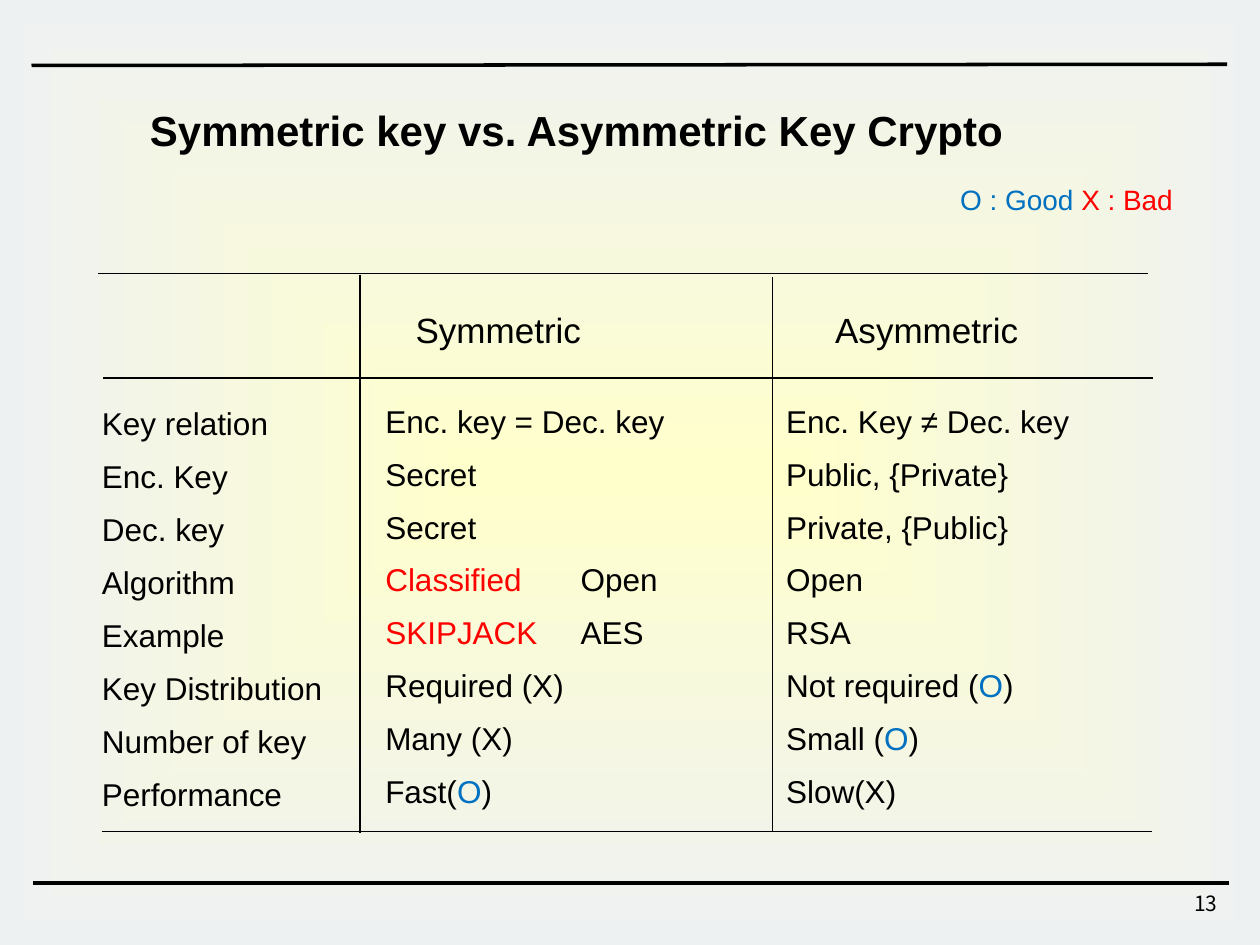
from lxml.etree import SubElement
from pptx import Presentation
from pptx.dml.color import RGBColor
from pptx.enum.shapes import MSO_CONNECTOR as Connector, MSO_SHAPE as Shape
from pptx.enum.text import MSO_ANCHOR as Anchor, MSO_AUTO_SIZE as AutoSize, PP_ALIGN as Align
from pptx.oxml import parse_xml
from pptx.oxml.ns import nsdecls, qn
from pptx.util import Inches, Pt

BLACK, RED, BLUE = "000000", "FF0000", "0070C0"
CENTER_COLOR, EDGE_COLOR = "FFFFCC", "EEF1F2"
TAB = 1.55

# Content: a line is a string or a list of (text, colour) runs
TITLE = "Symmetric key vs. Asymmetric Key Crypto"
LEGEND = [("O : Good ", BLUE), ("X : Bad", RED)]
PAGE_NUMBER = "13"
GOOD = [("O", BLUE), (")", BLACK)]

HEADINGS = [("Symmetric", (3.2, 2.4, 1.51, 0.43)),
            ("Asymmetric", (6.53, 2.4, 1.65, 0.43))]

COLUMNS = [
    ((0.71, 3.04, 2.04, 3.49),
     ["Key relation", "Enc. Key", "Dec. key", "Algorithm", "Example",
      "Key Distribution", "Number of key", "Performance"]),
    ((2.96, 3.02, 2.5, 3.49),
     ["Enc. key = Dec. key", "Secret", "Secret",
      [("Classified", RED), ("\tOpen", BLACK)],
      [("SKIPJACK", RED), ("\tAES", BLACK)],
      "Required (X)", "Many (X)", [("Fast(", BLACK)] + GOOD]),
    ((6.14, 3.02, 2.45, 3.49),
     ["Enc. Key ≠ Dec. key", "Public, {Private}", "Private, {Public}",
      "Open", "RSA", [("Not required (", BLACK)] + GOOD,
      [("Small (", BLACK)] + GOOD, "Slow(X)"]),
]

# Lines: start x, start y, end x, end y
FRAME_RULES = [(0.25, 0.52, 9.74, 0.51), (0.26, 7.01, 9.75, 7.01)]
GRID_RULES = [(0.78, 2.17, 9.11, 2.17), (0.82, 3, 9.15, 3), (0.81, 6.6, 9.14, 6.6),
              (2.86, 2.18, 2.86, 6.61), (6.13, 2.2, 6.13, 6.6)]


def color(value):
    return RGBColor.from_string(value)


def add_text(slide, lines, box, size=18, font="Arial", bold=False, align=Align.LEFT,
             spacing=None, wrap=True, shape=None):
    """Write lines into a new text box, or into the given placeholder."""
    left, top, width, height = map(Inches, box)
    if shape is None:
        shape = slide.shapes.add_textbox(left, top, width, height)
    shape.left, shape.top, shape.width, shape.height = left, top, width, height
    frame = shape.text_frame
    frame.word_wrap = wrap
    frame.auto_size = AutoSize.NONE
    frame.vertical_anchor = Anchor.TOP
    for index, line in enumerate(lines):
        paragraph = frame.add_paragraph() if index else frame.paragraphs[0]
        paragraph.alignment = align
        if spacing:
            paragraph.line_spacing = spacing
        runs = [(line, BLACK)] if isinstance(line, str) else line
        if any("\t" in text for text, _ in runs):
            tabs = SubElement(paragraph._p.get_or_add_pPr(), qn("a:tabLst"))
            SubElement(tabs, qn("a:tab"), pos=str(Inches(TAB)), algn="l")
        for text, run_color in runs:
            run = paragraph.add_run()
            run.text = text
            run.font.size = Pt(size)
            run.font.name = font
            run.font.bold = bold
            run.font.color.rgb = color(run_color)
            if font != "Arial":
                SubElement(run._r.get_or_add_rPr(), qn("a:ea"), typeface=font)


def add_rule(slide, ends, width):
    rule = slide.shapes.add_connector(Connector.STRAIGHT, *map(Inches, ends))
    rule.line.color.rgb = color(BLACK)
    rule.line.width = Pt(width)
    SubElement(rule._element.spPr, qn("a:effectLst"))


def add_backdrop(slide, width, height):
    """Cover the slide with a gradient that spreads from its centre."""
    backdrop = slide.shapes.add_shape(Shape.RECTANGLE, 0, 0, width, height)
    backdrop.shadow.inherit = False
    backdrop.line.fill.background()
    gradient = parse_xml(
        f'<a:gradFill {nsdecls("a")} rotWithShape="1"><a:gsLst>'
        f'<a:gs pos="0"><a:srgbClr val="{CENTER_COLOR}"/></a:gs>'
        f'<a:gs pos="100000"><a:srgbClr val="{EDGE_COLOR}"/></a:gs></a:gsLst>'
        '<a:path path="shape"><a:fillToRect l="50000" t="50000" r="50000" b="50000"/>'
        '</a:path></a:gradFill>')
    backdrop._element.spPr.find(qn("a:prstGeom")).addnext(gradient)
    # Behind the title placeholder
    slide.shapes._spTree.insert(2, backdrop._element)


def main():
    presentation = Presentation()
    presentation.slide_width, presentation.slide_height = Inches(10), Inches(7.5)
    slide = presentation.slides.add_slide(presentation.slide_layouts[5])

    # Frame
    add_backdrop(slide, presentation.slide_width, presentation.slide_height)
    for ends in FRAME_RULES:
        add_rule(slide, ends, 2)
    add_text(slide, [PAGE_NUMBER], (7.68, 7.02, 2.08, 0.33), size=12,
             font="Noto Sans CJK KR", align=Align.RIGHT)

    # Title and legend
    add_text(slide, [TITLE], (1.09, 0.78, 6.99, 0.5), size=24, bold=True,
             wrap=False, shape=slide.shapes.title)
    add_text(slide, [LEGEND], (6.93, 1.4, 3.07, 0.37), size=16, align=Align.CENTER)

    # Comparison
    for heading, box in HEADINGS:
        add_text(slide, [heading], box, size=20, align=Align.CENTER, wrap=False)
    for box, lines in COLUMNS:
        add_text(slide, lines, box, spacing=1.4)
    for ends in GRID_RULES:
        add_rule(slide, ends, 1)

    presentation.save("out.pptx")


if __name__ == "__main__":
    main()
